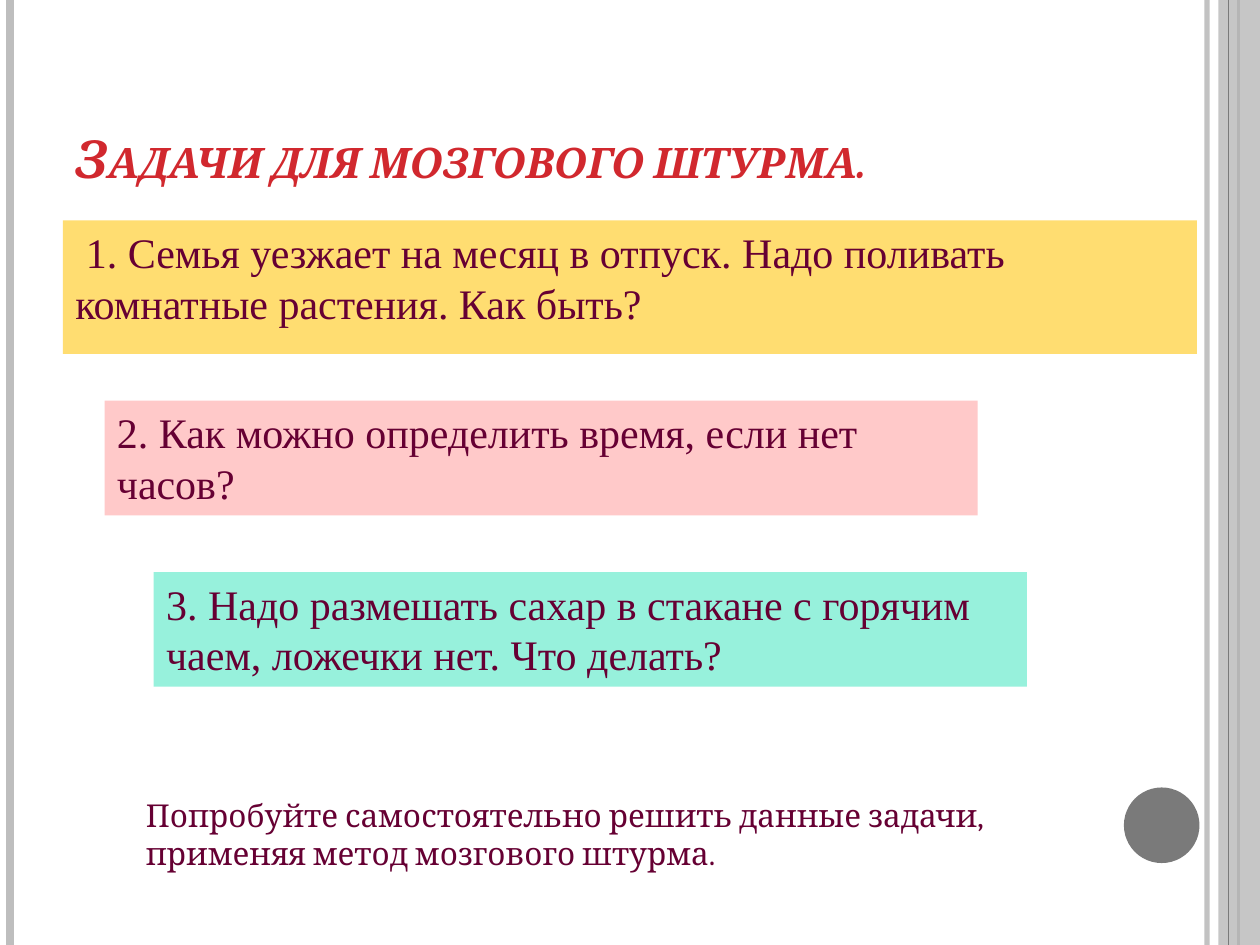
import pptx
import pptx.util
import pptx.dml.color
import pptx.enum.shapes
import pptx.enum.text
import pptx.oxml.ns
from lxml import etree

Inches, Pt = pptx.util.Inches, pptx.util.Pt
RGB = pptx.dml.color.RGBColor.from_string
KIND = pptx.enum.shapes.MSO_SHAPE
ANCHOR = pptx.enum.text.MSO_ANCHOR
qn = pptx.oxml.ns.qn

HUES = {
    "light": "BEBEBE", "dark": "7A7A7A", "title": "D1282E", "text": "660033",
    "gold": "FFDD71", "pink": "FFC9C9", "mint": "97F1DC",
}

deck = pptx.Presentation()
deck.slide_width, deck.slide_height = Inches(10), Inches(7.5)
slide = deck.slides.add_slide(deck.slide_layouts[5])
shapes = slide.shapes


def fade(shape, pct):
    """Make the shape's solid colour pct percent opaque."""
    hue = next(shape.element.spPr.iter(qn("a:srgbClr")))
    etree.SubElement(hue, qn("a:alpha")).set("val", str(pct * 1000))


def write(shape, text, font, size, hue):
    frame = shape.text_frame
    frame.word_wrap = True
    run = frame.paragraphs[0].add_run()
    run.text = text
    run.font.name, run.font.size = font, Pt(size)
    run.font.color.rgb = RGB(HUES[hue])
    return run


# Side stripes: the band covers the first three lines
stripes = [
    (9.58, "light", 3), (0.08, "light", 4.5), (9.83, "dark", 1.5),
    None, (9.75, "dark", 0.75),
]
for stripe in stripes:
    if stripe is None:
        band = shapes.add_shape(KIND.RECTANGLE, Inches(9.67), 0, Inches(0.33), Inches(7.5))
        band.shadow.inherit = False
        band.fill.solid()
        band.fill.fore_color.rgb = RGB(HUES["light"])
        band.line.fill.background()
        fade(band, 87)
        continue
    x, hue, width = stripe
    line = shapes.add_connector(
        pptx.enum.shapes.MSO_CONNECTOR.STRAIGHT, Inches(x), 0, Inches(x), Inches(7.5))
    line.line.color.rgb = RGB(HUES[hue])
    line.line.width = Pt(width)
    etree.SubElement(line.element.spPr, qn("a:effectLst"))
    if x == 9.58:
        fade(line, 93)

dot = shapes.add_shape(KIND.OVAL, Inches(8.92), Inches(6.25), Inches(0.6), Inches(0.6))
dot.shadow.inherit = False
dot.fill.solid()
dot.fill.fore_color.rgb = RGB(HUES["dark"])
dot.line.fill.background()

# Title
title = shapes.title
title.left, title.top = Inches(0.5), Inches(0.3)
title.width, title.height = Inches(8.17), Inches(1.25)
title.text_frame.vertical_anchor = ANCHOR.BOTTOM
run = write(title, "Задачи для мозгового штурма.", "Cambria", 30, "title")
run.font.bold = run.font.italic = True
run.font.element.set("cap", "small") if hasattr(run.font, "element") else run._r.get_or_add_rPr().set("cap", "small")
title.text_frame.paragraphs[0].alignment = pptx.enum.text.PP_ALIGN.LEFT

# Tasks and closing note
serif = "Times New Roman"
notes = [
    (0.5, 1.75, 9, 1.06, "gold", serif, 24,
     " 1. Семья уезжает на месяц в отпуск. Надо поливать комнатные растения. Как быть?"),
    (0.83, 3.18, 6.93, 0.91, "pink", serif, 24,
     "2. Как можно определить время, если нет часов?"),
    (1.22, 4.54, 6.93, 0.91, "mint", serif, 24,
     "3. Надо размешать сахар в стакане с горячим чаем, ложечки нет. Что делать?"),
    (1.06, 6.27, 8.03, 0.71, None, "Cambria", 18,
     "Попробуйте самостоятельно решить данные задачи, применяя метод мозгового штурма."),
]
for x, y, wide, high, hue, font, size, text in notes:
    box = shapes.add_textbox(Inches(x), Inches(y), Inches(wide), Inches(high))
    if hue:
        box.fill.solid()
        box.fill.fore_color.rgb = RGB(HUES[hue])
    write(box, text, font, size, "text")

deck.save("out.pptx")
